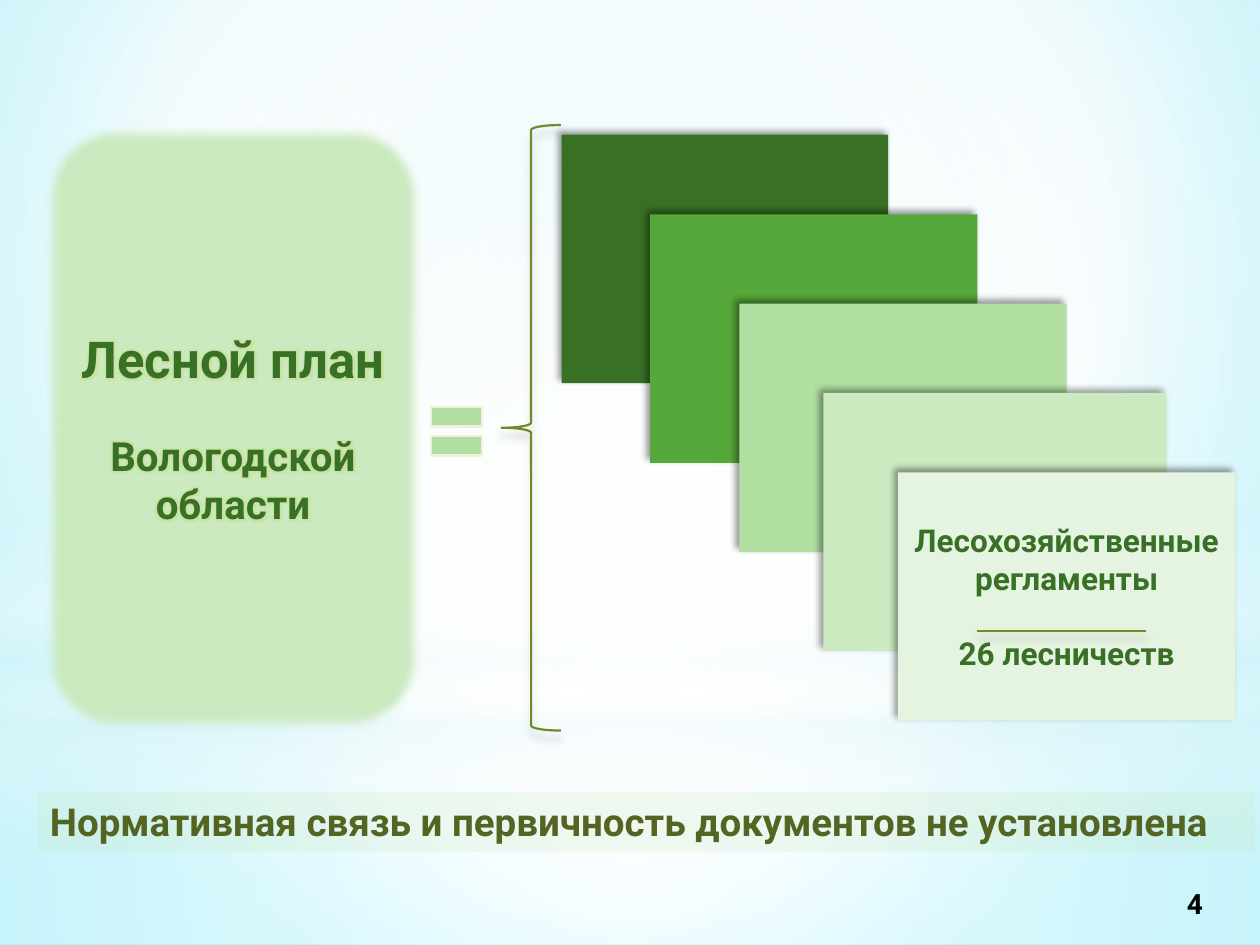
import pptx
import pptx.util
import pptx.dml.color
import pptx.enum.shapes
import pptx.enum.text
import pptx.oxml.ns
import lxml.etree

Pt = pptx.util.Pt
qn = pptx.oxml.ns.qn
MSO = pptx.enum.shapes.MSO_SHAPE
ALIGN = pptx.enum.text.PP_ALIGN
ANCHOR = pptx.enum.text.MSO_ANCHOR


def rgb(value):
    return pptx.dml.color.RGBColor.from_string(value)


def add_text(sp, text, size=18, color="387026", align=ALIGN.CENTER, anchor=ANCHOR.MIDDLE,
             before=0, glow=None):
    tf = sp.text_frame
    tf.word_wrap = True
    tf.vertical_anchor = anchor
    p = tf.add_paragraph() if tf.text else tf.paragraphs[0]
    p.alignment = align
    p.space_before = Pt(before)
    r = p.add_run()
    r.text = text
    r.font.name = "Roboto"
    r.font.size = Pt(size)
    r.font.bold = True
    r.font.color.rgb = rgb(color)
    if glow:
        effects = lxml.etree.Element(qn("a:effectLst"))
        halo = lxml.etree.SubElement(effects, qn("a:glow"), rad=str(Pt(5)))
        clr = lxml.etree.SubElement(halo, qn("a:srgbClr"), val=glow)
        lxml.etree.SubElement(clr, qn("a:alpha"), val="40000")
        r.font.fill
        r.element.rPr.find(qn("a:solidFill")).addnext(effects) if hasattr(r, "element") else \
            p.runs[-1]._r.rPr.find(qn("a:solidFill")).addnext(effects)


prs = pptx.Presentation()
prs.slide_width = Pt(720)
prs.slide_height = Pt(540)
s = prs.slides.add_slide(prs.slide_layouts[6])
shapes = s.shapes

center = (50, 50, 50, 50)
washes = [
    (None, None, (20, 10, 20, 60),
     [(0, "CAF0F6", 100), (60, "FFFFFF", 100), (100, "79EDFF", 100)]),
    (MSO.RECTANGLE, (0, 402, 720, 138), center,
     [(0, "FFFFFF", 91), (37, "FFFFFF", 76), (100, "DBF5F9", 79)]),
    (MSO.RECTANGLE, (0, 0, 720, 402), center,
     [(0, "FFFFFF", 89), (48, "FFFFFF", 62), (100, "DBF5F9", 79)]),
    (MSO.RECTANGLE, (0, 297, 720, 180), None,
     [(0, "FFFFFF", 1), (29, "FFFFFF", 30), (45, "DBF5F9", 40),
      (55, "FFFFFF", 26), (65, "DBF5F9", 60), (100, "FFFFFF", 1)]),
    (MSO.OVAL, (0, 126, 720, 402), center,
     [(0, "FFFFFF", 100), (56, "FFFFFF", 1)]),
]
for kind, box, focus, stops in washes:
    if kind is None:
        owner, fill = s, s.background.fill
    else:
        owner = shapes.add_shape(kind, *map(Pt, box))
        owner.shadow.inherit = False
        owner.line.fill.background()
        fill = owner.fill
    fill.gradient()
    grad = owner.element.find(".//" + qn("a:gradFill"))
    for child in list(grad):
        grad.remove(child)
    gs_list = lxml.etree.SubElement(grad, qn("a:gsLst"))
    for pos, color, alpha in stops:
        gs = lxml.etree.SubElement(gs_list, qn("a:gs"), pos=str(pos * 1000))
        clr = lxml.etree.SubElement(gs, qn("a:srgbClr"), val=color)
        if alpha < 100:
            lxml.etree.SubElement(clr, qn("a:alpha"), val=str(alpha * 1000))
    if focus:
        radial = lxml.etree.SubElement(grad, qn("a:path"), {"path": "circle"})
        sides = {side: str(v * 1000) for side, v in zip("ltrb", focus)}
        lxml.etree.SubElement(radial, qn("a:fillToRect"), sides)
    else:
        lxml.etree.SubElement(grad, qn("a:lin"), ang="5400000", scaled="0")

parts = {}
for name, kind, box, fill, line in [
    ("card 1", MSO.RECTANGLE, (321, 77, 186.5, 142), "387026", None),
    ("plan", MSO.ROUNDED_RECTANGLE, (25.5, 71.5, 215.5, 346), "CBEAC0", None),
    ("card 2", MSO.RECTANGLE, (371.5, 122.5, 187, 142), "55A839", None),
    ("card 3", MSO.RECTANGLE, (422.5, 173.5, 187, 142), "B0DFA1", None),
    ("card 4", MSO.RECTANGLE, (470.5, 224.5, 196, 147.5), "CBEAC0", None),
    ("regulations", MSO.RECTANGLE, (513, 270, 193, 141.5), "E5F4E0", None),
    ("brace", MSO.LEFT_BRACE, (286.5, 71.5, 34, 346), None, "728A26"),
    ("equals", MSO.MATH_EQUAL, (241, 223, 39.5, 47), "B0DFA1", "EDF3DB"),
    ("conclusion", MSO.RECTANGLE, (21.5, 452.5, 695.5, 34), "CBEAC0", None),
]:
    sp = shapes.add_shape(kind, *map(Pt, box))
    sp.shadow.inherit = False
    if fill:
        sp.fill.solid()
        sp.fill.fore_color.rgb = rgb(fill)
    else:
        sp.fill.background()
    if line:
        sp.line.color.rgb = rgb(line)
        sp.line.width = Pt(1.25)
    else:
        sp.line.fill.background()
    parts[name] = sp

rule = shapes.add_connector(pptx.enum.shapes.MSO_CONNECTOR.STRAIGHT,
                            Pt(558.5), Pt(360.5), Pt(655), Pt(360.5))
rule.line.color.rgb = rgb("728A26")
rule.line.width = Pt(1.25)
lxml.etree.SubElement(rule.element.spPr, qn("a:effectLst"))

cards = [sp for name, sp in parts.items() if name.startswith("card")]
for group, alpha, blur, dist, angle in [
    (cards + [parts["regulations"]], 40, 4, 3, 225),
    ([parts["brace"], rule], 20, 5, 4, 90),
]:
    for sp in group:
        effects = sp.element.spPr.find(qn("a:effectLst"))
        shadow = lxml.etree.SubElement(
            effects, qn("a:outerShdw"), blurRad=str(Pt(blur)), dist=str(Pt(dist)),
            dir=str(angle * 60000), algn="ctr", rotWithShape="0")
        clr = lxml.etree.SubElement(shadow, qn("a:srgbClr"), val="000000")
        lxml.etree.SubElement(clr, qn("a:alpha"), val=str(alpha * 1000))

effects = parts["plan"].element.spPr.find(qn("a:effectLst"))
lxml.etree.SubElement(effects, qn("a:softEdge"), rad=str(Pt(5)))
clr = parts["conclusion"].element.spPr.find(".//" + qn("a:srgbClr"))
lxml.etree.SubElement(clr, qn("a:alpha"), val="25000")

add_text(parts["plan"], "Лесной план", size=29, glow="C4D774")
add_text(parts["plan"], "Вологодской области", size=23, before=24, glow="C4D774")
add_text(parts["regulations"], "Лесохозяйственные регламенты")
add_text(parts["regulations"], "26 лесничеств", before=21)
add_text(parts["conclusion"], "Нормативная связь и первичность документов не установлена",
         size=22, color="546422", align=ALIGN.LEFT, anchor=ANCHOR.TOP)
number = shapes.add_textbox(Pt(664), Pt(502), Pt(37.5), Pt(28))
add_text(number, "4", size=16, color="000000")

prs.save("out.pptx")
